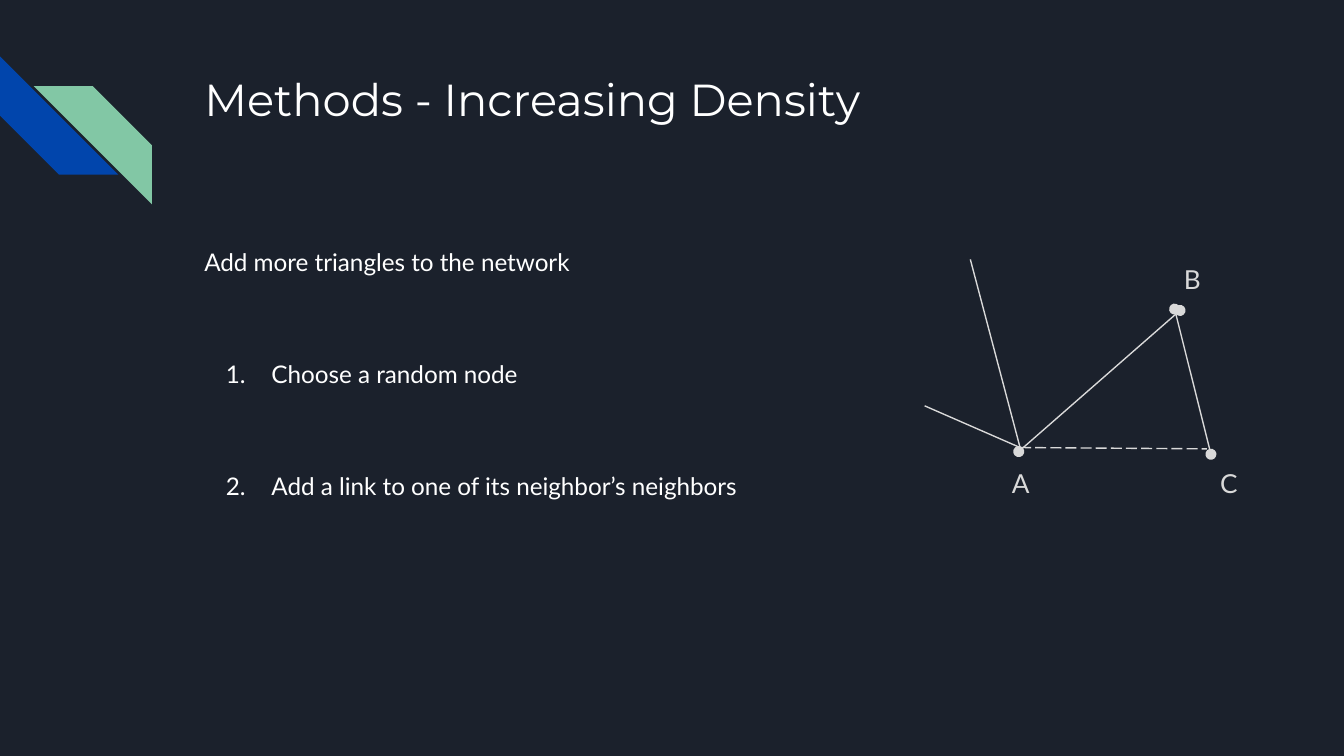
from lxml.etree import SubElement
from pptx import Presentation
from pptx.dml.color import RGBColor
from pptx.enum.dml import MSO_LINE
from pptx.enum.shapes import MSO_CONNECTOR, MSO_SHAPE
from pptx.enum.text import MSO_ANCHOR, MSO_AUTO_SIZE, PP_ALIGN
from pptx.oxml.ns import qn
from pptx.util import Inches, Pt

COLORS = {"back": "1B212C", "blue": "0145AC", "green": "82C7A5",
          "text": "FFFFFF", "graph": "D9D9D9"}
WIDTH = Inches(10)
PAD = Inches(0.1)
FRAME = {"margin_left": PAD, "margin_right": PAD, "margin_top": PAD,
         "margin_bottom": PAD, "word_wrap": True,
         "vertical_anchor": MSO_ANCHOR.TOP, "auto_size": MSO_AUTO_SIZE.NONE}
BODY = ["Add more triangles to the network", "Choose a random node",
        "Add a link to one of its neighbor’s neighbors"]
EDGES = [
    ((8.78, 2.31), (7.58, 3.36), True, False),
    ((7.59, 3.33), (7.22, 1.93), False, False),
    ((7.59, 3.33), (6.88, 3.02), False, False),
    ((8.74, 2.3), (9.01, 3.38), True, False),
    ((7.59, 3.33), (8.98, 3.34), False, True),
]
LABELS = [("A", 7.43, 3.38), ("B", 8.71, 1.86), ("C", 8.98, 3.38)]


def color(name):
    return RGBColor.from_string(COLORS[name])


def apply(item, values):
    for key, value in values.items():
        setattr(item, key, value)


def place(shape, box):
    names = ("left", "top", "width", "height")
    apply(shape, dict(zip(names, map(Inches, box))))


def write(para, text, font, size, tint, **style):
    apply(para, {"alignment": PP_ALIGN.LEFT, "space_before": Pt(0), **style})
    run = para.add_run()
    run.text = text
    apply(run.font, {"name": font, "size": Pt(size)})
    run.font.color.rgb = color(tint)


def add_stripe(slide, left, top, turn, tint):
    box = map(Inches, (left, top, 0.88, 0.88))
    shape = slide.shapes.add_shape(MSO_SHAPE.DIAGONAL_STRIPE, *box)
    shape.rotation = turn
    shape.shadow.inherit = False
    shape.fill.solid()
    shape.fill.fore_color.rgb = color(tint)
    shape.line.fill.background()


def set_title(shape, text):
    place(shape, (1.42, 0.43, 7.7, 1))
    apply(shape.text_frame, FRAME)
    write(shape.text_frame.paragraphs[0], text, "Montserrat", 24, "text")


def set_bullet(para, number):
    props = para._p.get_or_add_pPr()
    props.set("marL", str(Inches(0.5) if number else 0))
    props.set("indent", str(Inches(-0.34) if number else 0))
    if number:
        tint = SubElement(props, qn("a:buClr"))
        SubElement(tint, qn("a:srgbClr"), val=COLORS["text"])
        SubElement(props, qn("a:buFont"), typeface="Lato")
        SubElement(props, qn("a:buAutoNum"), type="arabicPeriod")
    else:
        SubElement(props, qn("a:buNone"))


def set_body(shape, lines):
    place(shape, (1.42, 1.71, 7.7, 3.18))
    frame = shape.text_frame
    apply(frame, FRAME)
    for index, text in enumerate(lines):
        para = frame.add_paragraph() if index else frame.paragraphs[0]
        write(para, text, "Lato", 13, "text", line_spacing=1.15,
              space_before=Pt(42 if index else 0))
        set_bullet(para, index > 0)


def add_edge(slide, start, end, dots, dashed):
    ends = map(Inches, start + end)
    edge = slide.shapes.add_connector(MSO_CONNECTOR.STRAIGHT, *ends)
    edge.line.width = Pt(0.75)
    edge.line.color.rgb = color("graph")
    if dashed:
        edge.line.dash_style = MSO_LINE.LONG_DASH
    props = edge._element.spPr
    if dots:
        for tag in ("a:headEnd", "a:tailEnd"):
            SubElement(props.find(qn("a:ln")), qn(tag),
                       type="oval", w="med", len="med")
    SubElement(props, qn("a:effectLst"))


def add_label(slide, text, left, top):
    box = map(Inches, (left, top, 0.27, 0.44))
    frame = slide.shapes.add_textbox(*box).text_frame
    apply(frame, {**FRAME, "auto_size": MSO_AUTO_SIZE.SHAPE_TO_FIT_TEXT})
    write(frame.paragraphs[0], text, "Lato", 14, "graph")


def main():
    deck = Presentation()
    apply(deck, {"slide_width": WIDTH, "slide_height": WIDTH * 9 // 16})
    slide = deck.slides.add_slide(deck.slide_layouts[1])
    slide.background.fill.solid()
    slide.background.fill.fore_color.rgb = color("back")
    add_stripe(slide, 0, 0.42, 270, "blue")
    add_stripe(slide, 0.25, 0.64, 90, "green")
    set_title(slide.shapes.title, "Methods - Increasing Density")
    set_body(slide.placeholders[1], BODY)
    for edge in EDGES:
        add_edge(slide, *edge)
    for label in LABELS:
        add_label(slide, *label)
    deck.save("out.pptx")


if __name__ == "__main__":
    main()
